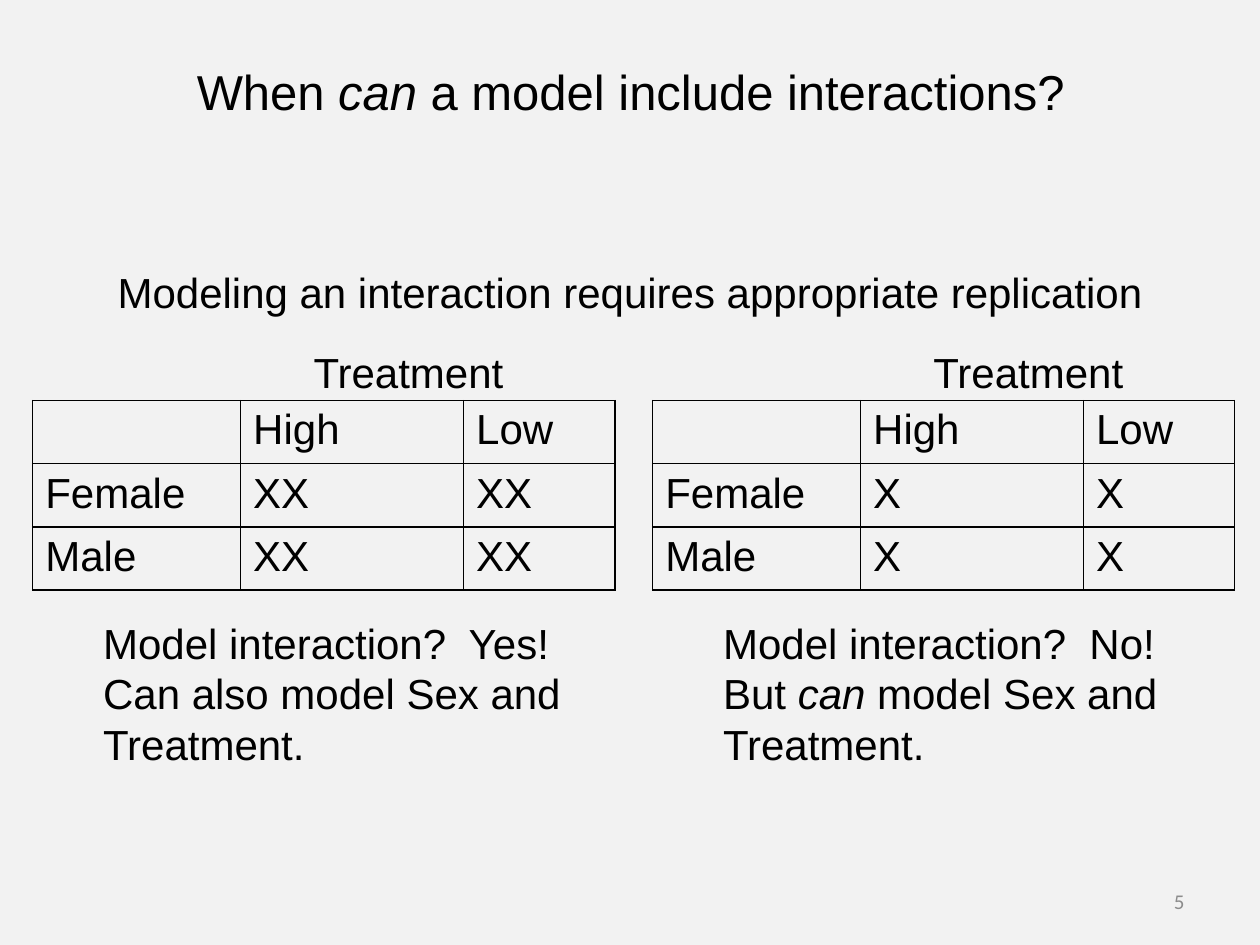
from dataclasses import dataclass

from lxml import etree
from pptx import Presentation
from pptx.dml.color import RGBColor
from pptx.enum.text import MSO_ANCHOR, PP_ALIGN
from pptx.oxml.ns import qn
from pptx.util import Inches, Pt

TOP, MIDDLE = MSO_ANCHOR.TOP, MSO_ANCHOR.MIDDLE
LEFT, CENTER, RIGHT = PP_ALIGN.LEFT, PP_ALIGN.CENTER, PP_ALIGN.RIGHT
BLANK = 6


@dataclass(frozen=True)
class Theme:
    background: str = "F2F2F2"
    ink: str = "000000"
    muted: str = "8C8C8C"
    font: str = "Arial"
    number_font: str = "Calibri"
    title: int = 28
    body: int = 24
    number: int = 12
    border: float = 1


THEME = Theme()
WIDTH, HEIGHT = 10, 7.5
COLS = (1.65, 1.77, 1.2)
ROW = 0.5
PANEL_TOP, PANEL_PITCH = 2.7, 4.92
PANEL_LEFT = 0.26


def style(p, size=THEME.body, color=THEME.ink, font=THEME.font, align=LEFT):
    p.alignment = align
    p.font.size = Pt(size)
    p.font.name = font
    p.font.color.rgb = RGBColor.from_string(color)


def add_text(s, box, lines, anchor=TOP, wrap=False, **look):
    """Add a text box with one paragraph per line; *asterisks* mark italics."""
    tf = s.shapes.add_textbox(*map(Inches, box)).text_frame
    tf.word_wrap = wrap
    tf.vertical_anchor = anchor
    for i, line in enumerate(lines):
        p = tf.paragraphs[0] if i == 0 else tf.add_paragraph()
        style(p, **look)
        for j, part in enumerate(line.split("*")):
            r = p.add_run()
            r.text = part
            if j % 2:
                r.font.italic = True


def add_borders(cell):
    tc_pr = cell._tc.get_or_add_tcPr()
    for i, side in enumerate(("lnL", "lnR", "lnT", "lnB")):
        ln = etree.Element(qn(f"a:{side}"), w=str(Pt(THEME.border)))
        fill = etree.SubElement(ln, qn("a:solidFill"))
        etree.SubElement(fill, qn("a:srgbClr"), val=THEME.ink)
        tc_pr.insert(i, ln)


def add_grid(s, left, top, rows):
    size = map(Inches, (left, top, sum(COLS), ROW * len(rows)))
    table = s.shapes.add_table(len(rows), len(COLS), *size).table
    table.first_row = table.horz_banding = False
    for col, width in zip(table.columns, COLS):
        col.width = Inches(width)
    for r, values in enumerate(rows):
        for c, value in enumerate(values):
            cell = table.cell(r, c)
            cell.text = value
            cell.fill.background()
            style(cell.text_frame.paragraphs[0])
            add_borders(cell)


def add_design_panel(s, left, top, mark, answer, answer_width):
    """Place a treatment-by-sex table, its heading and the answer below it."""
    rows = [("", "High", "Low"), ("Female", mark, mark), ("Male", mark, mark)]
    grid_top = top + 0.48
    answer_top = grid_top + ROW * len(rows) + 0.17
    add_grid(s, left, grid_top, rows)
    add_text(s, (left + 2.13, top, 1.73, ROW), ["Treatment"])
    add_text(s, (left + 0.46, answer_top, answer_width, 1.31), answer)


def add_heading(s, title, statement):
    add_text(s, (1.42, 0.44, 7.17, 0.57), [title], size=THEME.title, align=CENTER)
    add_text(s, (0.79, 2.07, 8.42, 0.5), [statement], align=CENTER)


def add_slide_number(s, number):
    w, h = 2.33, 0.4
    add_text(s, (WIDTH * 0.95 - w, HEIGHT - 0.15 - h, w, h), [number],
             anchor=MIDDLE, wrap=True, size=THEME.number, color=THEME.muted,
             font=THEME.number_font, align=RIGHT)


def main():
    prs = Presentation()
    prs.slide_width, prs.slide_height = Inches(WIDTH), Inches(HEIGHT)
    s = prs.slides.add_slide(prs.slide_layouts[BLANK])
    fill = s.background.fill
    fill.solid()
    fill.fore_color.rgb = RGBColor.from_string(THEME.background)

    add_heading(s, "When *can* a model include interactions?",
                "Modeling an interaction requires appropriate replication")
    panels = [
        ("XX", ["Model interaction?  Yes!", "Can also model Sex and",
                "Treatment."], 3.87),
        ("X", ["Model interaction?  No!", "But *can* model Sex and",
               "Treatment."], 3.68),
    ]
    for i, panel in enumerate(panels):
        add_design_panel(s, PANEL_LEFT + i * PANEL_PITCH, PANEL_TOP, *panel)
    add_slide_number(s, "5")
    prs.save("out.pptx")


if __name__ == "__main__":
    main()
